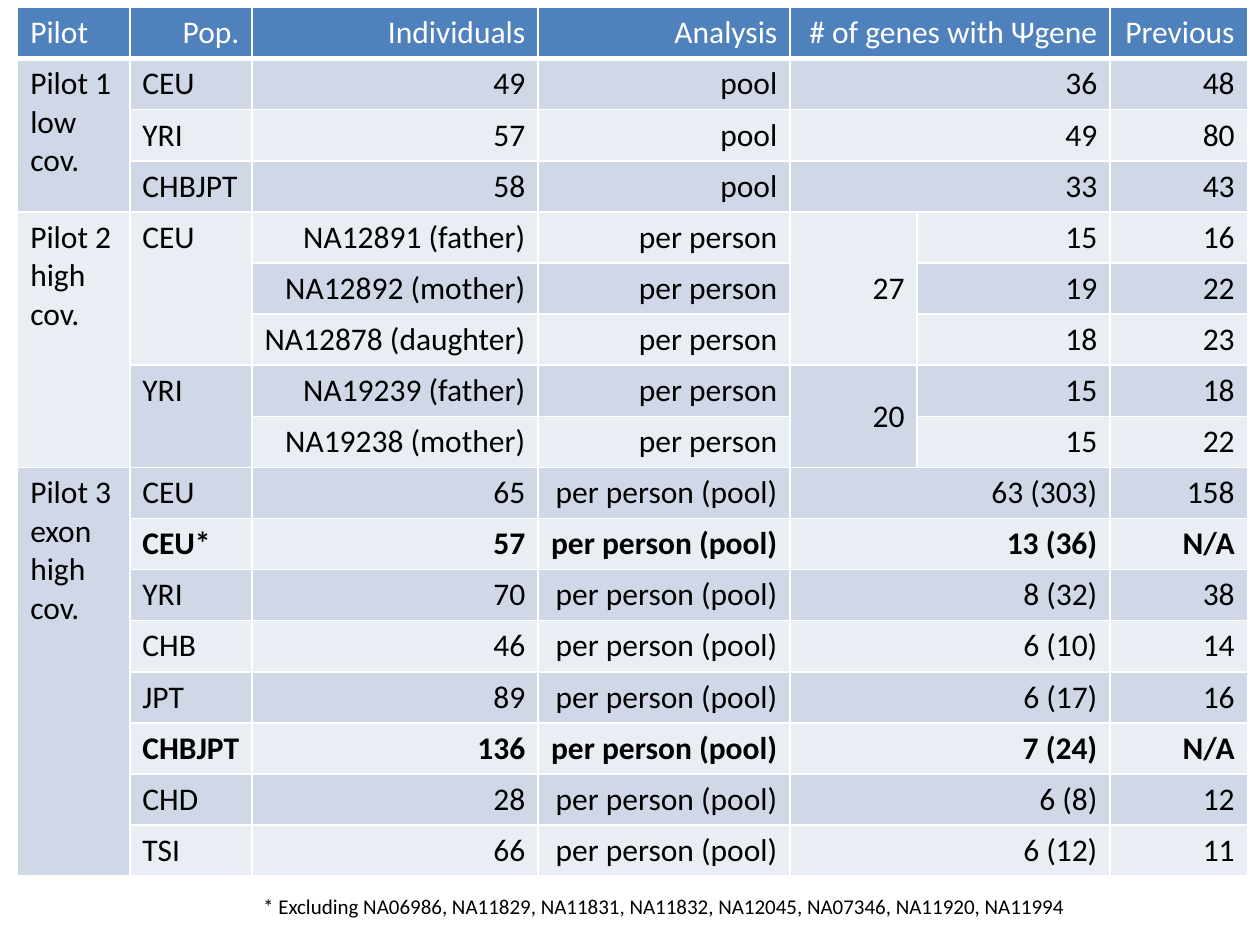
from dataclasses import dataclass

from lxml import etree
from pptx import Presentation
from pptx import util as u
from pptx.dml import color
from pptx.enum import text
from pptx.oxml import ns


@dataclass(frozen=True)
class Theme:
    font: str = "Calibri"
    table_size: int = 18
    note_size: int = 12
    header: str = "4F81BD"
    band_dark: str = "D0D8E8"
    band_light: str = "E9EDF4"
    white: str = "FFFFFF"
    ink: str = "000000"


theme = Theme()


def format_text(frame, size, ink, bold=False, align=text.PP_ALIGN.LEFT):
    for paragraph in frame.paragraphs:
        paragraph.alignment = align
        for run in paragraph.runs:
            run.font.name = theme.font
            run.font.size = u.Pt(size)
            run.font.bold = bold
            run.font.color.rgb = color.RGBColor.from_string(ink)


def add_borders(cell, bottom_width):
    properties = cell._tc.get_or_add_tcPr()
    for side in ("L", "R", "T", "B"):
        width = bottom_width if side == "B" else 1
        line = etree.SubElement(properties, ns.qn(f"a:ln{side}"), w=str(u.Pt(width)))
        fill = etree.SubElement(line, ns.qn("a:solidFill"))
        etree.SubElement(fill, ns.qn("a:srgbClr"), val=theme.white)


presentation = Presentation()
presentation.slide_width = u.Inches(10)
presentation.slide_height = u.Inches(7.5)
slide = presentation.slides.add_slide(presentation.slide_layouts[6])

# Table content; cells covered by a merge are empty
pool, person, both = "pool", "per person", "per person (pool)"
rows = [
    ("Pilot", "Pop.", "Individuals", "Analysis", "# of genes with Ψgene", "", "Previous"),
    ("Pilot 1\nlow cov.", "CEU", "49", pool, "36", "", "48"),
    ("", "YRI", "57", pool, "49", "", "80"),
    ("", "CHBJPT", "58", pool, "33", "", "43"),
    ("Pilot 2\nhigh cov.", "CEU", "NA12891 (father)", person, "27", "15", "16"),
    ("", "", "NA12892 (mother)", person, "", "19", "22"),
    ("", "", "NA12878 (daughter)", person, "", "18", "23"),
    ("", "YRI", "NA19239 (father)", person, "20", "15", "18"),
    ("", "", "NA19238 (mother)", person, "", "15", "22"),
    ("Pilot 3\nexon\nhigh cov.", "CEU", "65", both, "63 (303)", "", "158"),
    ("", "CEU*", "57", both, "13 (36)", "", "N/A"),
    ("", "YRI", "70", both, "8 (32)", "", "38"),
    ("", "CHB", "46", both, "6 (10)", "", "14"),
    ("", "JPT", "89", both, "6 (17)", "", "16"),
    ("", "CHBJPT", "136", both, "7 (24)", "", "N/A"),
    ("", "CHD", "28", both, "6 (8)", "", "12"),
    ("", "TSI", "66", both, "6 (12)", "", "11"),
]
column_widths = (0.89, 0.97, 2.27, 2, 1.01, 1.53, 1.09)

# Table grid
table = slide.shapes.add_table(
    len(rows), len(column_widths),
    u.Inches(0.14), u.Inches(0.06), u.Inches(9.75), u.Inches(6.88),
).table
for column, width in zip(table.columns, column_widths):
    column.width = u.Inches(width)

# Cells: header row, then alternating bands
for r, values in enumerate(rows):
    is_header = r == 0
    band = theme.header if is_header else theme.band_dark if r % 2 else theme.band_light
    is_bold = values[-1] == "N/A"
    for c, value in enumerate(values):
        cell = table.cell(r, c)
        add_borders(cell, 3 if is_header else 1)
        cell.fill.solid()
        cell.fill.fore_color.rgb = color.RGBColor.from_string(band)
        cell.text_frame.text = value
        is_left = c == 0 or (c == 1 and not is_header)
        format_text(
            cell.text_frame, theme.table_size,
            theme.white if is_header else theme.ink, is_bold,
            text.PP_ALIGN.LEFT if is_left else text.PP_ALIGN.RIGHT,
        )

# Pilot groups run down the first column
for first, last in ((1, 3), (4, 8), (9, 16)):
    table.cell(first, 0).merge(table.cell(last, 0))

# Pilot 2 populations share a name and a gene total
family_rows = ((4, 6), (7, 8))
for first, last in family_rows:
    for c in (1, 4):
        table.cell(first, c).merge(table.cell(last, c))
    table.cell(first, 4).vertical_anchor = text.MSO_ANCHOR.MIDDLE

# Elsewhere the gene count spans two columns
for r, values in enumerate(rows):
    if not values[5]:
        table.cell(r, 4).merge(table.cell(r, 5))

# Footnote
footnote = slide.shapes.add_textbox(u.Inches(1.99), u.Inches(7.04), u.Inches(6.76), u.Inches(0.3))
footnote.text_frame.word_wrap = False
footnote.text_frame.auto_size = text.MSO_AUTO_SIZE.SHAPE_TO_FIT_TEXT
footnote.text_frame.text = (
    "* Excluding NA06986, NA11829, NA11831, NA11832, NA12045, NA07346, NA11920, NA11994"
)
format_text(footnote.text_frame, theme.note_size, theme.ink)

presentation.save("out.pptx")
